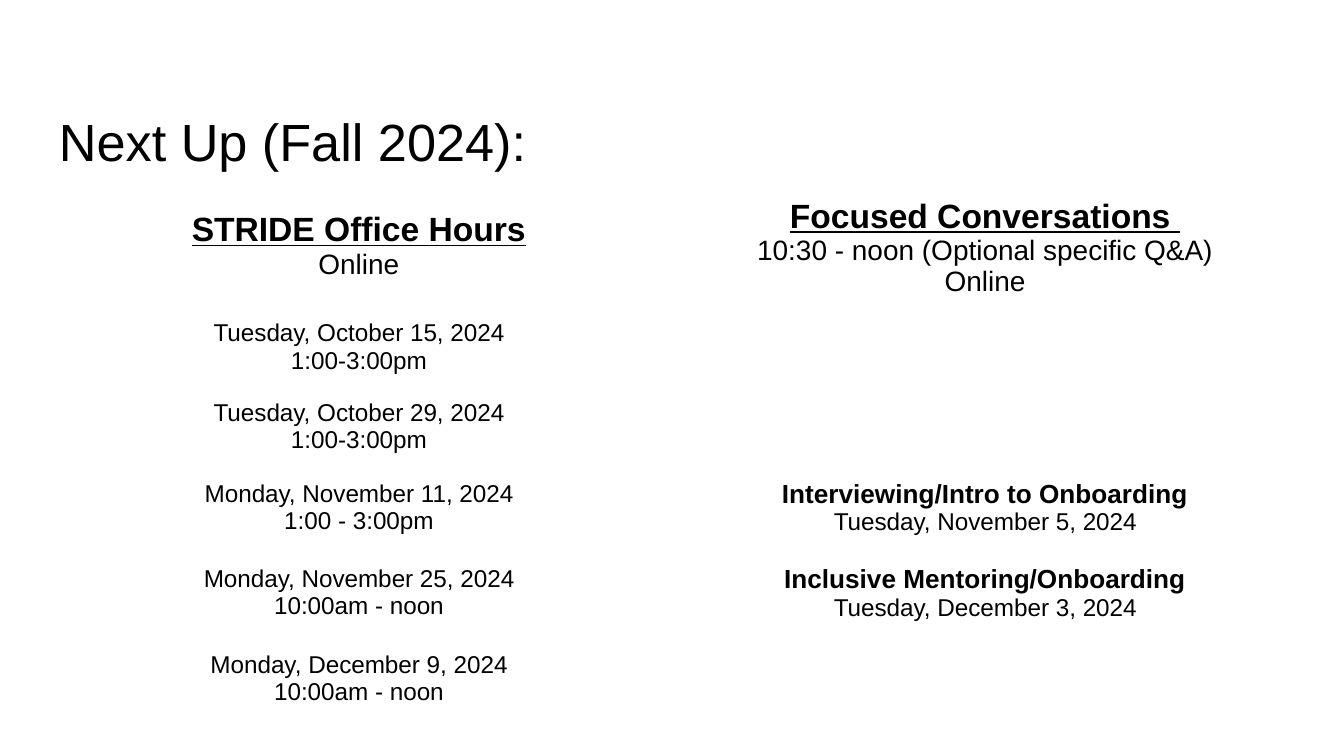
"""Build the slide listing the coming fall sessions."""
import dataclasses
import typing

import pptx
import pptx.dml.color
import pptx.enum.text
import pptx.oxml.ns
import pptx.util

Pt = pptx.util.Pt
Align = pptx.enum.text.PP_ALIGN
Anchor = pptx.enum.text.MSO_ANCHOR


@dataclasses.dataclass(frozen=True)
class Theme:
    font: str = "Arial"
    ink: str = "000000"
    title: int = 28
    head: int = 18
    sub: int = 15
    topic: int = 14
    body: int = 13
    inset: float = 7.2
    grid: str = "{2D5ABB26-0587-4C30-8999-92F81FD0307C}"


class Line(typing.NamedTuple):
    text: str
    size: int
    bold: bool = False
    under: bool = False


class Entry(typing.NamedTuple):
    row: int
    col: int
    lines: list[Line]
    pad: float = 0
    anchor: typing.Any = Anchor.MIDDLE


THEME = Theme()
LEFT, WIDTH = 24.5, 671
ROWS = [54, 44.6, 41, 36.7, 39.6, 36.7]
VENUE = Line("Online", THEME.sub)
HOURS = [
    ("Tuesday, October 15, 2024", "1:00-3:00pm", 0),
    ("Tuesday, October 29, 2024", "1:00-3:00pm", 0),
    ("Monday, November 11, 2024", "1:00 - 3:00pm", THEME.inset),
    ("Monday, November 25, 2024", "10:00am - noon", THEME.inset),
    ("Monday, December 9, 2024", "10:00am - noon", THEME.inset),
]
TALKS = [
    (3, "Interviewing/Intro to Onboarding", "Tuesday, November 5, 2024"),
    (4, "Inclusive Mentoring/Onboarding", "Tuesday, December 3, 2024"),
]
ENTRIES = [
    Entry(0, 0, [Line("STRIDE Office Hours", THEME.head, True, True),
                 VENUE], THEME.inset, Anchor.TOP),
    Entry(0, 1, [Line("Focused Conversations ", THEME.head, True, True),
                 Line("10:30 - noon (Optional specific Q&A)", THEME.sub),
                 VENUE], 0, Anchor.TOP),
    *(Entry(row, 0, [Line(day, THEME.body), Line(time, THEME.body)], pad)
      for row, (day, time, pad) in enumerate(HOURS, 1)),
    *(Entry(row, 1, [Line(topic, THEME.topic, True), Line(day, THEME.body)])
      for row, topic, day in TALKS),
]


def write(para, text: str, *, size: int, bold: bool = False,
          under: bool = False, align=Align.LEFT) -> None:
    para.alignment = align
    run = para.add_run()
    run.text = text
    font = run.font
    font.name, font.size = THEME.font, Pt(size)
    font.bold, font.underline = bold, under
    font.color.rgb = pptx.dml.color.RGBColor.from_string(THEME.ink)


def pad_box(box, side: float, ends: float) -> None:
    box.margin_left = box.margin_right = Pt(side)
    box.margin_top = box.margin_bottom = Pt(ends)


def draw_title(slide, text: str) -> None:
    frame = slide.shapes.add_textbox(
        Pt(LEFT), Pt(51.3), Pt(WIDTH), Pt(45.4)).text_frame
    frame.word_wrap = True
    pad_box(frame, THEME.inset, THEME.inset)
    write(frame.paragraphs[0], text, size=THEME.title)


def draw_entry(table, entry: Entry) -> None:
    cell = table.cell(entry.row, entry.col)
    cell.vertical_anchor = entry.anchor
    pad_box(cell, THEME.inset, entry.pad)
    frame = cell.text_frame
    for num, line in enumerate(entry.lines):
        para = frame.add_paragraph() if num else frame.paragraphs[0]
        write(para, line.text, size=line.size, bold=line.bold,
              under=line.under, align=Align.CENTER)


def draw_table(slide) -> None:
    frame = slide.shapes.add_table(
        len(ROWS), 2, Pt(LEFT), Pt(106), Pt(WIDTH), Pt(sum(ROWS)))
    table = frame.table
    table.first_row = table.horz_banding = False
    tag = pptx.oxml.ns.qn("a:tableStyleId")
    next(frame.element.iter(tag)).text = THEME.grid
    for row, height in zip(table.rows, ROWS):
        row.height = Pt(height)
    for cell in table.iter_cells():
        cell.fill.background()
    for entry in ENTRIES:
        draw_entry(table, entry)


def main() -> None:
    deck = pptx.Presentation()
    deck.slide_width, deck.slide_height = Pt(720), Pt(405)
    slide = deck.slides.add_slide(deck.slide_layouts[6])
    draw_title(slide, "Next Up (Fall 2024):")
    draw_table(slide)
    deck.save("out.pptx")


if __name__ == "__main__":
    main()
